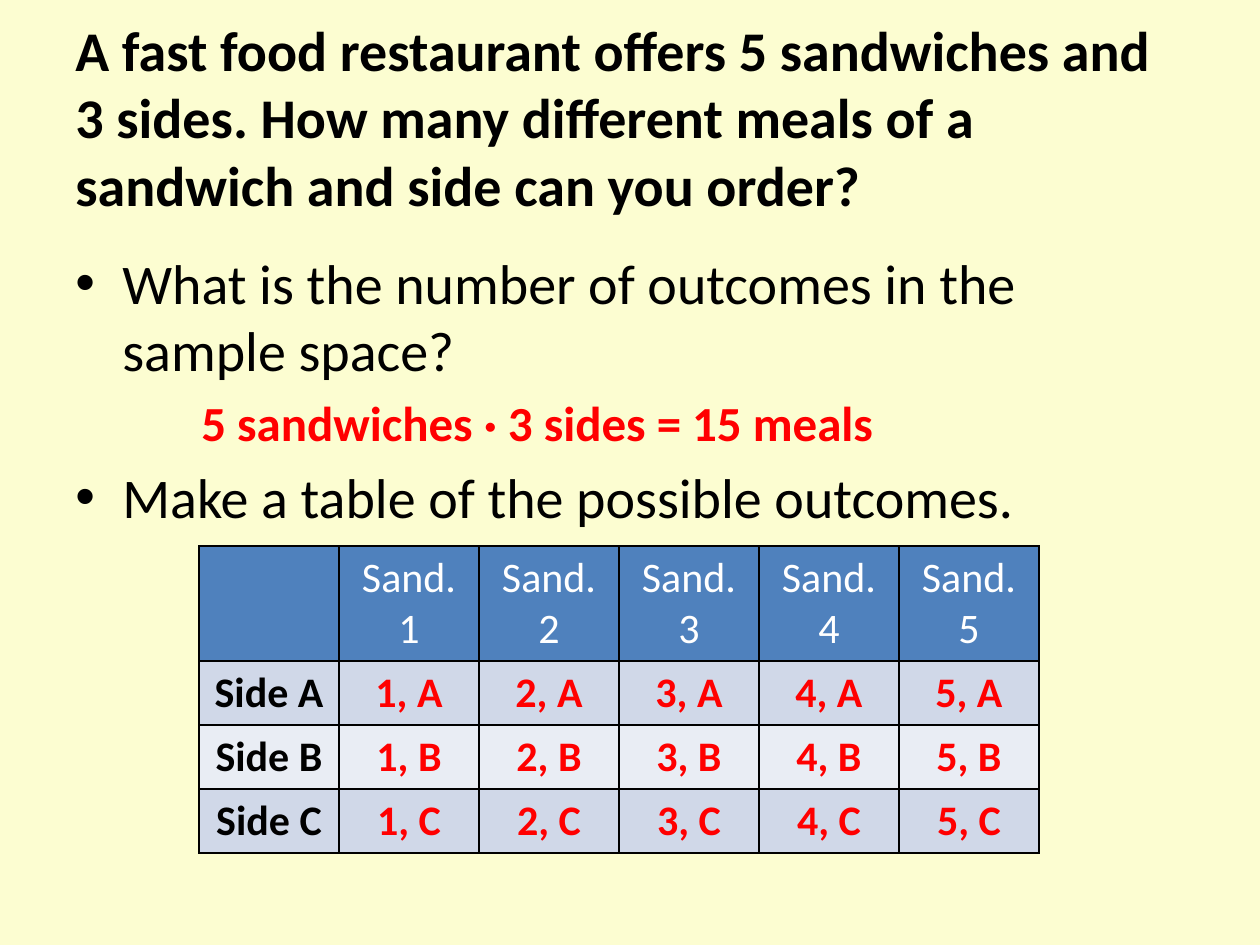
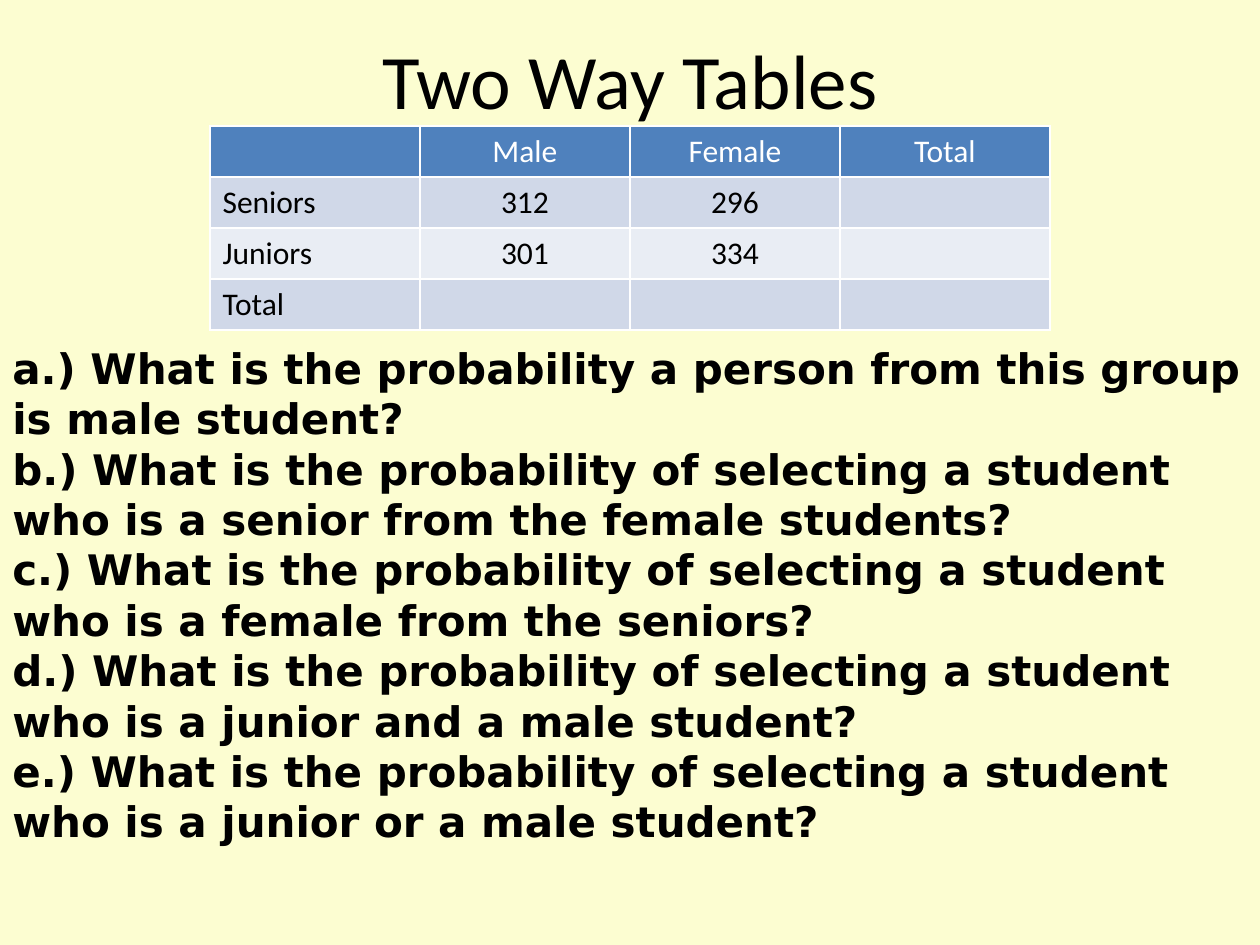
from pptx import Presentation
from pptx.dml.color import RGBColor
from pptx.enum.text import MSO_ANCHOR as ANCHOR, PP_ALIGN as ALIGN
from pptx.oxml.ns import qn
from pptx.util import Pt
from lxml.etree import SubElement

PX = 914400 / 126  # EMU in one px
FONT = "Calibri"
PAPER, BLACK, WHITE, RED = "FCFDD1", "000000", "FFFFFF", "FF0000"
HEADER, BANDS = "4F81BD", ("D0D8E8", "E9EDF4")
rgb = RGBColor.from_string


def add_text(slide, box, lines, font=FONT, anchor=ANCHOR.TOP):
    """Each line is (text, size, bold, colour, align); returns the paragraphs."""
    tf = slide.shapes.add_textbox(*[int(v * PX) for v in box]).text_frame
    tf.word_wrap = True
    tf.vertical_anchor = anchor
    for i, (text, size, bold, colour, align) in enumerate(lines):
        p = tf.paragraphs[0] if i == 0 else tf.add_paragraph()
        p.text, p.alignment = text, align
        p.font.name, p.font.size, p.font.bold = font, Pt(size), bold
        p.font.color.rgb = rgb(colour)
    return tf.paragraphs


def add_table(slide, x, y, col_w, heights, rows, size, border, body_style):
    """body_style(column) gives (bold, colour, align) below the header row."""
    n_cols = len(rows[0])
    box = [int(v * PX) for v in (x, y, col_w * n_cols, sum(heights))]
    table = slide.shapes.add_table(len(rows), n_cols, *box).table
    table.first_row = table.horz_banding = False
    for col in table.columns:
        col.width = int(col_w * PX)
    for r, row in enumerate(rows):
        table.rows[r].height = int(heights[r] * PX)
        for c, text in enumerate(row):
            cell = table.cell(r, c)
            bold, colour, align = body_style(c) if r else (False, WHITE, ALIGN.CENTER)
            p = cell.text_frame.paragraphs[0]
            p.text, p.alignment = text, align
            p.font.name, p.font.size, p.font.bold = FONT, Pt(size), bold
            p.font.color.rgb = rgb(colour)
            # Borders come before the fill in the cell properties
            tc_pr = cell._tc.get_or_add_tcPr()
            for side in ("a:lnL", "a:lnR", "a:lnT", "a:lnB"):
                ln = SubElement(tc_pr, qn(side), w=str(Pt(1)))
                SubElement(SubElement(ln, qn("a:solidFill")), qn("a:srgbClr"), val=border)
            cell.fill.solid()
            cell.fill.fore_color.rgb = rgb(BANDS[(r - 1) % 2] if r else HEADER)


prs = Presentation()
prs.slide_width, prs.slide_height = int(1260 * PX), int(945 * PX)
meals, two_way = [prs.slides.add_slide(prs.slide_layouts[6]) for _ in range(2)]
for slide in (meals, two_way):
    slide.background.fill.solid()
    slide.background.fill.fore_color.rgb = rgb(PAPER)

# Slide 1: question
question = ("A fast food restaurant offers 5 sandwiches and 3 sides. "
            "How many different meals of a sandwich and side can you order?")
add_text(meals, (63, 38, 1134, 157), [(question, 32, True, BLACK, ALIGN.LEFT)],
         anchor=ANCHOR.MIDDLE)

# Slide 1: bullets, with the answer indented between them
steps = add_text(meals, (63, 242, 1134, 624), [
    ("What is the number of outcomes in the sample space?", 32, False, BLACK, ALIGN.LEFT),
    ("5 sandwiches · 3 sides = 15 meals", 28, True, RED, ALIGN.LEFT),
    ("Make a table of the possible outcomes.", 32, False, BLACK, ALIGN.LEFT),
])
for i, p in enumerate(steps):
    p.space_before = int(p.font.size * 0.2)
    is_answer = i == 1
    p_pr = p._p.get_or_add_pPr()
    p_pr.set("marL", str(int((126 if is_answer else 47) * PX)))
    p_pr.set("indent", str(int((0 if is_answer else -47) * PX)))
    if not is_answer:
        bullet_font = p_pr.makeelement(qn("a:buFont"), {"typeface": "Arial"})
        bullet = p_pr.makeelement(qn("a:buChar"), {"char": "•"})
        def_r_pr = p_pr.find(qn("a:defRPr"))
        def_r_pr.addprevious(bullet_font)
        def_r_pr.addprevious(bullet)

# Slide 1: table of outcomes
sandwiches = range(1, 6)
outcomes = [[""] + [f"Sand. {n}" for n in sandwiches]]
outcomes += [[f"Side {side}"] + [f"{n}, {side}" for n in sandwiches] for side in "ABC"]
add_table(meals, 199, 546, 140, [115, 64, 64, 64], outcomes, 24, BLACK,
          lambda c: (True, RED if c else BLACK, ALIGN.CENTER))

# Slide 2: title
add_text(two_way, (63, 0, 1134, 157), [("Two Way Tables", 44, False, BLACK, ALIGN.CENTER)],
         anchor=ANCHOR.MIDDLE)

# Slide 2: table of students
students = [
    ["", "Male", "Female", "Total"],
    ["Seniors", "312", "296", ""],
    ["Juniors", "301", "334", ""],
    ["Total", "", "", ""],
]
add_table(two_way, 210, 126, 210, [51] * 4, students, 18, WHITE,
          lambda c: (False, BLACK, ALIGN.CENTER if c else ALIGN.LEFT))

# Slide 2: questions
selecting = "What is the probability of selecting a student who is a"
questions = [
    "What is the probability a person from this group is male student?",
    f"{selecting} senior from the female students?",
    f"{selecting} female from the seniors?",
    f"{selecting} junior and a male student?",
    f"{selecting} junior or a male student?",
]
add_text(two_way, (0, 336, 1260, 522),
         [(f"{letter}.) {text}", 24, True, BLACK, ALIGN.LEFT)
          for letter, text in zip("abcde", questions)], font="DejaVu Sans")

prs.save("out.pptx")
